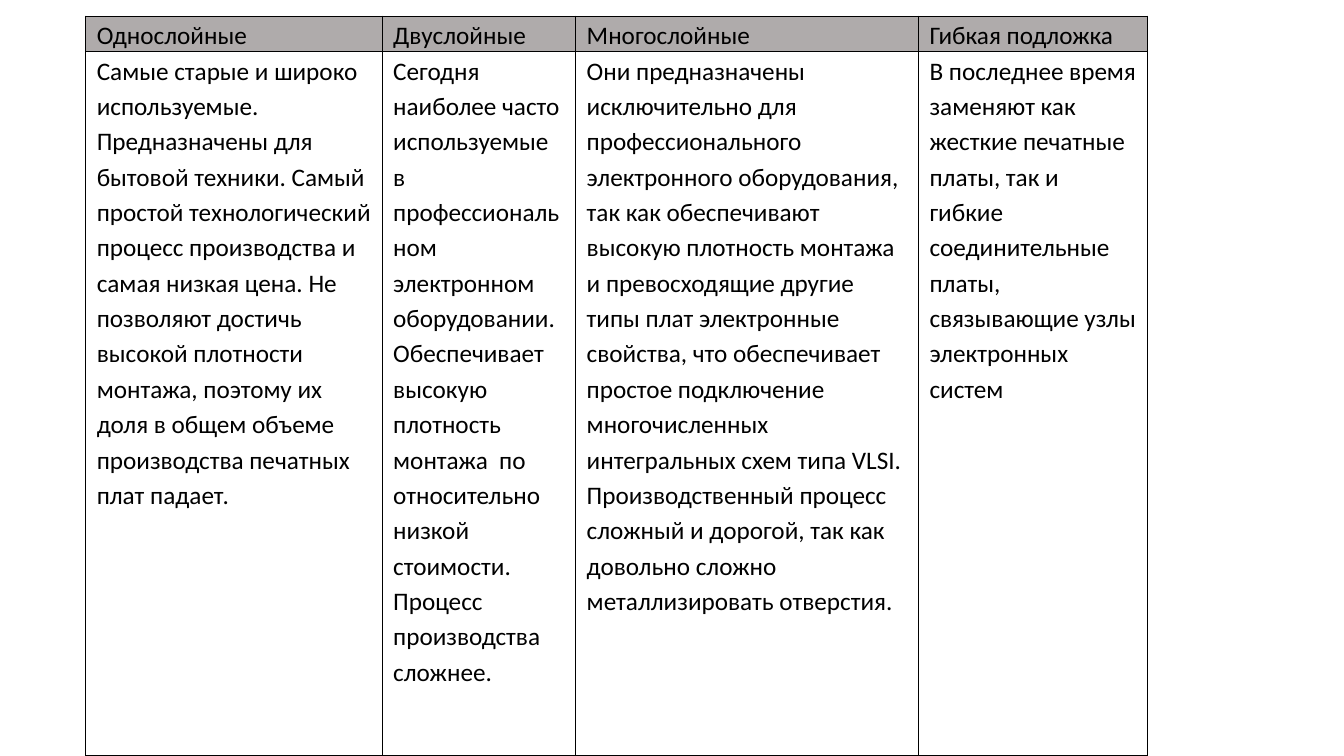
from lxml import etree
from pptx import Presentation
from pptx.dml.color import RGBColor
from pptx.oxml.ns import qn
from pptx.util import Inches, Pt

COLORS = {"text": "000000", "border": "000000", "header": "AFABAB"}
FONT = "Calibri"
SLIDE_W, SLIDE_H = 13.33, 7.5
LEFT, TOP = 0.85, 0.16
COL_WIDTHS = (2.94, 1.92, 3.4, 2.27)
HEADER_H = 0.35
ROW_HEIGHTS = (HEADER_H, SLIDE_H - TOP - HEADER_H)

BOARD_TYPES = [
    ("Однослойные",
     "Самые старые и широко используемые. Предназначены для бытовой техники. "
     "Самый простой технологический процесс производства и самая низкая цена. "
     "Не позволяют достичь высокой плотности монтажа, поэтому их доля в общем "
     "объеме производства печатных плат падает."),
    ("Двуслойные",
     "Сегодня наиболее часто используемые в профессиональном электронном "
     "оборудовании. Обеспечивает высокую плотность монтажа  по относительно "
     "низкой стоимости. Процесс производства сложнее."),
    ("Многослойные",
     "Они предназначены исключительно для профессионального электронного "
     "оборудования, так как обеспечивают высокую плотность монтажа и "
     "превосходящие другие типы плат электронные свойства, что обеспечивает "
     "простое подключение многочисленных интегральных схем типа VLSI. "
     "Производственный процесс сложный и дорогой, так как довольно сложно "
     "металлизировать отверстия."),
    ("Гибкая подложка",
     "В последнее время заменяют как жесткие печатные платы, так и гибкие "
     "соединительные платы, связывающие узлы электронных систем"),
]


def write_text(tf, text, size=18, color="text", spacing=1.15):
    p = tf.paragraphs[0]
    p.line_spacing = spacing
    r = p.add_run()
    r.text = text
    r.font.name = FONT
    r.font.size = Pt(size)
    r.font.bold = False
    r.font.color.rgb = RGBColor.from_string(COLORS[color])


def set_borders(cell, width=1):
    tc_pr = cell._tc.get_or_add_tcPr()
    for i, side in enumerate(("lnL", "lnR", "lnT", "lnB")):
        ln = etree.Element(qn(f"a:{side}"), w=str(Pt(width)))
        fill = etree.SubElement(ln, qn("a:solidFill"))
        etree.SubElement(fill, qn("a:srgbClr"), val=COLORS["border"])
        tc_pr.insert(i, ln)


def main():
    prs = Presentation()
    prs.slide_width, prs.slide_height = Inches(SLIDE_W), Inches(SLIDE_H)
    s = prs.slides.add_slide(prs.slide_layouts[6])

    table = s.shapes.add_table(
        len(ROW_HEIGHTS), len(COL_WIDTHS), Inches(LEFT), Inches(TOP),
        Inches(sum(COL_WIDTHS)), Inches(sum(ROW_HEIGHTS))).table
    table.first_row = table.horz_banding = False
    for row, height in zip(table.rows, ROW_HEIGHTS):
        row.height = Inches(height)

    for col, (width, board) in enumerate(zip(COL_WIDTHS, BOARD_TYPES)):
        table.columns[col].width = Inches(width)
        for row, text in enumerate(board):
            cell = table.cell(row, col)
            cell.margin_left = cell.margin_right = Inches(0.11)
            cell.margin_top = cell.margin_bottom = 0
            if row == 0:
                cell.fill.solid()
                cell.fill.fore_color.rgb = RGBColor.from_string(COLORS["header"])
            else:
                cell.fill.background()
            set_borders(cell)
            write_text(cell.text_frame, text)

    prs.save("out.pptx")


if __name__ == "__main__":
    main()
